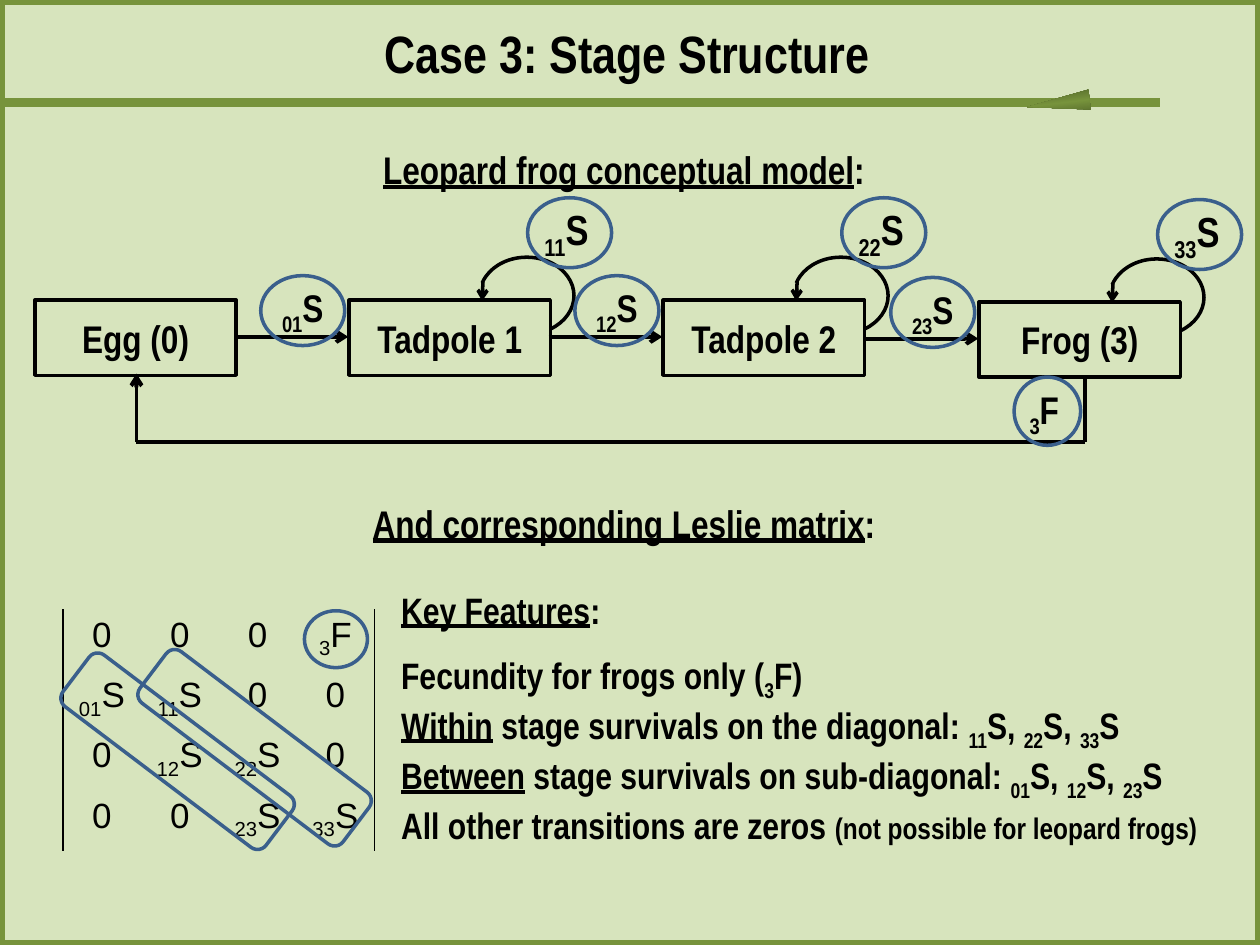
from copy import deepcopy

from lxml import etree
from pptx import Presentation
from pptx.dml.color import RGBColor
from pptx.enum import shapes as kinds, text as modes
from pptx.oxml.ns import qn
from pptx.util import Pt

INK, GREEN, DARK, BLUE, PALE = "000000", "77933C", "4F6228", "3A5F8C", "D7E4BD"
SHAPE = kinds.MSO_SHAPE
MID, LEFT = modes.PP_ALIGN.CENTER, modes.PP_ALIGN.LEFT
PLAIN = "{2D5ABB26-0587-4C30-8999-92F81FD0307C}"


def color(code):
    return RGBColor.from_string(code)


def write(frame, *lines, size=22, small=17, font="Arial Narrow", bold=True,
          align=MID, gap=0):
    """Fill a frame; parts split by | may start with _ (subscript), = (underline), - (small)."""
    for i, line in enumerate(lines):
        para = frame.paragraphs[0] if i == 0 else frame.add_paragraph()
        props = para._p.get_or_add_pPr()
        props.set("marL", "0")
        props.set("indent", "0")
        etree.SubElement(props, qn("a:buNone"))
        para.alignment = align
        para.space_before = Pt(gap if i == 1 else 0)
        for part in filter(None, line.split("|")):
            mark = part[0] if part[0] in "_=-" else ""
            run = para.add_run()
            run.text = part[len(mark):]
            face = run.font
            face.name, face.bold = font, bold
            face.size = Pt(small if mark == "-" else size)
            face.color.rgb = color(INK)
            if mark == "=":
                face.underline = True
            if mark == "_":
                run._r.get_or_add_rPr().set("baseline", "-25000")


def setup(frame):
    frame.word_wrap = True
    frame.auto_size = modes.MSO_AUTO_SIZE.NONE
    frame.vertical_anchor = modes.MSO_ANCHOR.TOP


def place(item, x, y, w, h):
    item.left, item.top, item.width, item.height = map(Pt, (x, y, w, h))


def label(slide, x, y, w, h, *lines, **style):
    frame = slide.shapes.add_textbox(Pt(x), Pt(y), Pt(w), Pt(h)).text_frame
    setup(frame)
    write(frame, *lines, **style)


def outline(slide, kind, x, y, w, h, ink=BLUE, width=2, turn=0):
    item = slide.shapes.add_shape(kind, Pt(x), Pt(y), Pt(w), Pt(h))
    item.shadow.inherit = False
    item.fill.background()
    item.line.color.rgb = color(ink)
    item.line.width = Pt(width)
    item.rotation = turn
    return item


def line(slide, x1, y1, x2, y2, ink=INK, width=2.25, arrow=False):
    item = slide.shapes.add_connector(
        kinds.MSO_CONNECTOR.STRAIGHT, Pt(x1), Pt(y1), Pt(x2), Pt(y2))
    item.line.color.rgb = color(ink)
    item.line.width = Pt(width)
    if arrow:
        etree.SubElement(item.line._get_or_add_ln(), qn("a:tailEnd"), type="arrow")
    etree.SubElement(item._element.spPr, qn("a:effectLst"))


def decor(slide, w, h):
    """Background, frame and the rule under the title."""
    slide.background.fill.solid()
    slide.background.fill.fore_color.rgb = color(PALE)
    line(slide, 0, 58.5, 663, 58.5, GREEN, 5)
    outline(slide, SHAPE.RECTANGLE, 0, 0, w, h, GREEN, 6)
    tip = outline(slide, SHAPE.ISOSCELES_TRIANGLE, 599, 41, 11.5, 36, turn=263.2)
    tip.line.fill.background()
    tip.fill.gradient()
    tip.fill.gradient_angle = 180
    first = tip.fill._fill._gradFill.gsLst[0]
    first.addnext(deepcopy(first))
    for stop, (spot, code) in zip(tip.fill.gradient_stops,
                                  ((0, DARK), (0.5, GREEN), (1, DARK))):
        stop.position = spot
        stop.color.rgb = color(code)


def stage(slide, x, y, name):
    item = outline(slide, SHAPE.RECTANGLE, x, y, 115, 43, INK)
    setup(item.text_frame)
    item.text_frame.vertical_anchor = modes.MSO_ANCHOR.MIDDLE
    write(item.text_frame, name)


def step(slide, x, y, rate):
    """Arrow to the next stage with its circled rate."""
    line(slide, x - 15, y + 35, x + 50, y + 35, arrow=True)
    label(slide, x - 0.5, y + 1.5, 49, 34, rate)
    outline(slide, SHAPE.OVAL, x, y, 48, 40)


def loop(slide, x, y, rate):
    """Arc back into the same stage with its circled rate."""
    arc = outline(slide, SHAPE.ARC, x, y, 54, 44, INK)
    for i, angle in enumerate((196, 55)):
        arc.adjustments[i] = angle * 0.6
    line(slide, x + 2, y + 14, x + 1.5, y + 25, width=2, arrow=True)
    label(slide, x + 30, y - 34, 43, 36, rate, size=24, align=LEFT)
    outline(slide, SHAPE.OVAL, x + 27.5, y - 34, 48, 40)


def birth(slide, x, y, w, h):
    """Path from the last stage back to the first."""
    line(slide, x, y + h, x, y, arrow=True)
    line(slide, x, y + h, x + w, y + h)
    line(slide, x + w, y + h, x + w, y + 1)
    label(slide, x + w - 52, y + 3.5, 57.5, 25, "_3|F")
    outline(slide, SHAPE.OVAL, x + w - 40.5, y + 2, 38, 39)


def model(slide, x, y):
    names = "Egg (0)", "Tadpole 1", "Tadpole 2", "Frog (3)"
    spots = [(x + dx, y + dy) for dx, dy in ((0, 0), (179.5, 0), (359, 0), (539.5, 1))]
    for i, ((left, top), name) in enumerate(zip(spots, names)):
        stage(slide, left, top, name)
        if i:
            loop(slide, left + 74.5, top - 24.5, f"_{i}{i}|S")
            step(slide, left - 50.5, top - 14, f"_{i - 1}{i}|S")
    birth(slide, x + 58, y + 42, 542, 39)


def border(cell, tag):
    edge = etree.Element(qn(tag), w=str(Pt(1)))
    fill = etree.SubElement(edge, qn("a:solidFill"))
    etree.SubElement(fill, qn("a:srgbClr"), val=INK)
    cell._tc.get_or_add_tcPr().insert(0, edge)


def matrix(slide, x, y, w, h):
    rows = (("0", "0", "0", "_3|F"),
            ("_01|S", "_11|S", "0", "0"),
            ("0", "_12|S", "_22|S", "0"),
            ("0", "0", "_23|S", "_33|S"))
    grid = slide.shapes.add_table(4, 4, Pt(x), Pt(y), Pt(w), Pt(h)).table
    grid.first_row = grid.horz_banding = False
    grid._tbl.tblPr.find(qn("a:tableStyleId")).text = PLAIN
    for r, row in enumerate(rows):
        for c, value in enumerate(row):
            cell = grid.cell(r, c)
            cell.fill.background()
            write(cell.text_frame, value, size=20, font="Arial", bold=False)
        border(grid.cell(r, 0), "a:lnL")
        border(grid.cell(r, 3), "a:lnR")
    outline(slide, SHAPE.OVAL, x + 138, y + 1, 36, 32.5)
    for dx, dy in ((91, 6.5), (47, 8.5)):
        outline(slide, SHAPE.ROUNDED_RECTANGLE, x + dx, y + dy, 37, 145.5, turn=307.1)


def prose(slide):
    """Title and list of key features."""
    title, body = slide.placeholders
    place(title, 53.5, 8.5, 610, 44)
    place(body, 222, 332, 480, 147)
    for item in (title, body):
        setup(item.text_frame)
    write(title.text_frame, "Case 3: Stage Structure", size=30)
    write(body.text_frame,
          "=Key Features|:",
          "Fecundity for frogs only (|_3|F)",
          "=Within| stage survivals on the diagonal: |_11|S, |_22|S, |_33|S",
          "=Between| stage survivals on sub-diagonal: |_01|S, |_12|S, |_23|S",
          "All other transitions are zeros |-(not possible for leopard frogs)",
          size=21, align=LEFT, gap=12)


def main():
    deck = Presentation()
    deck.slide_width, deck.slide_height = Pt(720), Pt(540)
    slide = deck.slides.add_slide(deck.slide_layouts[1])
    decor(slide, 720, 540)
    prose(slide)
    for y, head in ((80, "=Leopard frog conceptual model|:"),
                    (282, "=And corresponding Leslie matrix|:")):
        label(slide, 180, y, 353, 34, head)
    model(slide, 20, 171.5)
    matrix(slide, 36, 348, 178, 138)
    deck.save("out.pptx")


if __name__ == "__main__":
    main()
